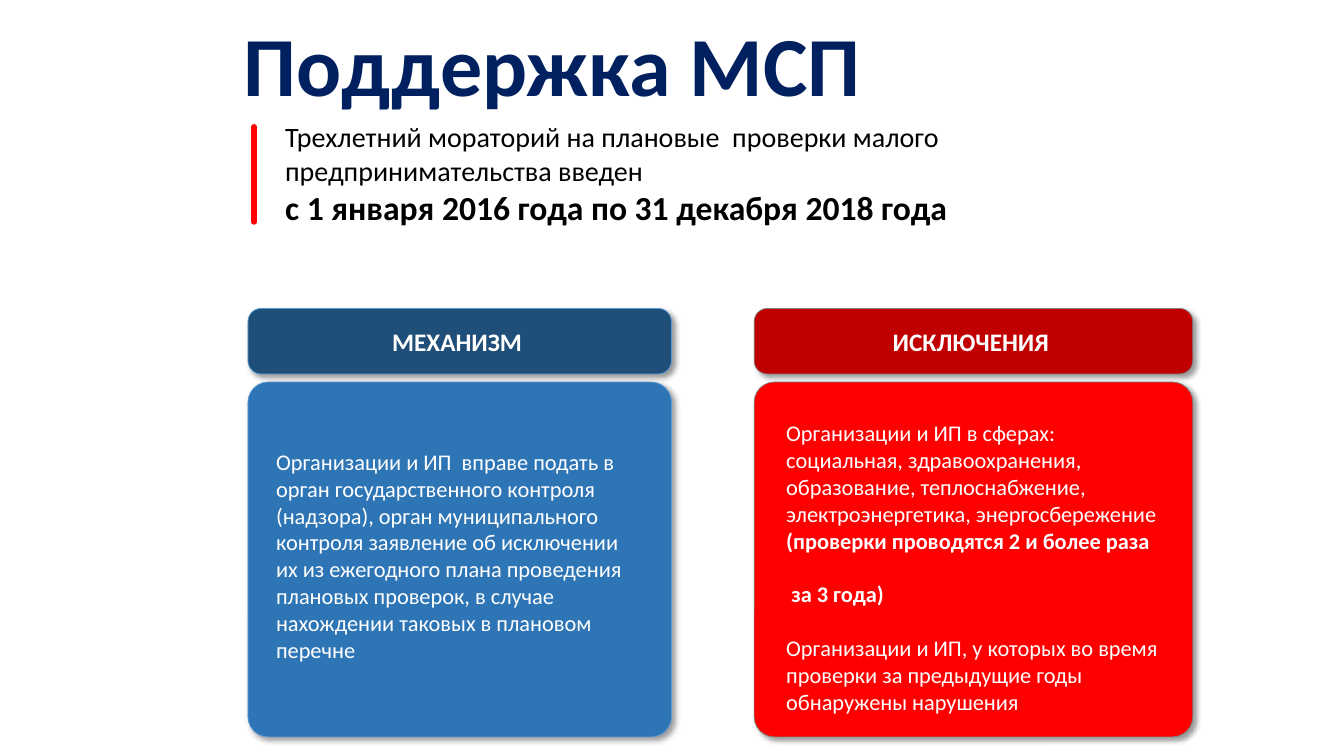
from lxml import etree
from pptx import Presentation
from pptx import util as u
from pptx.dml.color import RGBColor
from pptx.enum import shapes, text
from pptx.oxml import ns

NAVY = RGBColor(0x00, 0x20, 0x60)
BLUE = RGBColor(0x2E, 0x75, 0xB6)
DARK_BLUE = RGBColor(0x1F, 0x4E, 0x79)
LIGHT_BLUE = RGBColor(0x5B, 0x9B, 0xD5)
RED = RGBColor(0xFF, 0x00, 0x00)
DARK_RED = RGBColor(0xC0, 0x00, 0x00)
GREY = RGBColor(0x80, 0x80, 0x80)
WHITE = RGBColor(0xFF, 0xFF, 0xFF)
BLACK = RGBColor(0x00, 0x00, 0x00)

WIDTH, HEIGHT = 13.33, 7.5
HEADER_HEIGHT, PANEL_GAP, CORNER = 0.65, 0.08, 0.2
BLANK_LINE = 19.2

MECHANISM = [
    ("Организации и ИП  вправе подать в орган государственного контроля "
     "(надзора), орган муниципального контроля заявление об исключении "
     "их из ежегодного плана проведения плановых проверок, в случае "
     "нахождении таковых в плановом перечне", {}),
]
EXCEPTIONS = [
    ("Организации и ИП в сферах:", {}),
    ("социальная, здравоохранения,", {}),
    ("образование, теплоснабжение,", {}),
    ("электроэнергетика, энергосбережение", {}),
    ("(проверки проводятся 2 и более раза", {"bold": True}),
    (" за 3 года)", {"bold": True, "before": BLANK_LINE}),
    ("Организации и ИП, у которых во время проверки за предыдущие годы "
     "обнаружены нарушения", {"before": BLANK_LINE}),
]


def write(para, words, size=16, color=WHITE, bold=False, before=0,
          align=text.PP_ALIGN.LEFT, spacing=None):
    para.alignment = align
    para.space_before = u.Pt(before)
    para.line_spacing = spacing
    span = para.add_run()
    span.text = words
    span.font.name = "Calibri"
    span.font.size = u.Pt(size)
    span.font.bold = bold
    span.font.color.rgb = color


def fill_frame(frame, lines, anchor, margins=(0.1, 0.05, 0.1, 0.05)):
    """Write (words, format) lines; margins run left, top, right, bottom."""
    frame.word_wrap = True
    frame.vertical_anchor = anchor
    (frame.margin_left, frame.margin_top,
     frame.margin_right, frame.margin_bottom) = map(u.Inches, margins)
    for index, (words, style) in enumerate(lines):
        para = frame.add_paragraph() if index else frame.paragraphs[0]
        write(para, words, **style)


def add_text(page, box, lines, anchor=text.MSO_ANCHOR.TOP):
    label = page.shapes.add_textbox(*map(u.Inches, box))
    fill_frame(label.text_frame, lines, anchor)


def add_card(page, box, fill, outline):
    """Rounded card with a soft shadow to the lower right."""
    card = page.shapes.add_shape(
        shapes.MSO_SHAPE.ROUNDED_RECTANGLE, *map(u.Inches, box))
    card.adjustments[0] = CORNER / box[3] if box[3] > 1 else CORNER
    card.fill.solid()
    card.fill.fore_color.rgb = fill
    card.line.color.rgb = outline
    card.line.width = u.Pt(0.5)
    card.shadow.inherit = False
    effects = card._element.spPr.find(ns.qn("a:effectLst"))
    shadow = etree.SubElement(
        effects, ns.qn("a:outerShdw"), blurRad=str(u.Pt(4)),
        dist=str(u.Pt(3)), dir="2700000", algn="tl", rotWithShape="0")
    tint = etree.SubElement(shadow, ns.qn("a:srgbClr"), val="000000")
    etree.SubElement(tint, ns.qn("a:alpha"), val="40000")
    return card


def add_heading(page, box):
    left, top, width, height = box
    title_height = height * 0.51
    add_text(page, (left, top, width, title_height),
             [("Поддержка МСП",
               {"size": 60, "color": NAVY, "bold": True, "spacing": 0.9})],
             text.MSO_ANCHOR.BOTTOM)
    add_text(page, (left + 0.41, height * 0.49, 7.72, height * 0.51),
             [("Трехлетний мораторий на плановые  проверки малого "
               "предпринимательства введен", {"size": 20, "color": BLACK}),
              ("с 1 января 2016 года по 31 декабря 2018 года",
               {"size": 24, "color": BLACK, "bold": True})])
    bar = page.shapes.add_connector(
        shapes.MSO_CONNECTOR.STRAIGHT,
        *map(u.Inches, (left + 0.2, 1.26, left + 0.2, 2.2)))
    bar.line.color.rgb = RED
    bar.line.width = u.Pt(4.25)
    bar.line._get_or_add_ln().set("cap", "rnd")
    etree.SubElement(bar._element.spPr, ns.qn("a:effectLst"))


def add_column(page, box, header, lines, fills, outline, anchor, margins):
    """Header card over a body card, together filling the box."""
    left, top, width, height = box
    offset = HEADER_HEIGHT + PANEL_GAP
    body = add_card(page, (left, top + offset, width, height - offset),
                    fills[1], outline)
    fill_frame(body.text_frame, lines, anchor, margins)
    cap = add_card(page, (left, top, width, HEADER_HEIGHT), fills[0], outline)
    fill_frame(cap.text_frame,
               [(header, {"size": 18, "bold": True,
                          "align": text.PP_ALIGN.CENTER})],
               text.MSO_ANCHOR.MIDDLE, (0.1, 0.05, 0.15, 0.05))


def main():
    deck = Presentation()
    deck.slide_width, deck.slide_height = u.Inches(WIDTH), u.Inches(HEIGHT)
    page = deck.slides.add_slide(deck.slide_layouts[6])
    add_heading(page, (2.32, 0, WIDTH - 2.32, HEIGHT * 0.31))
    add_column(page, (2.46, 3.06, 4.2, 4.25), "МЕХАНИЗМ", MECHANISM,
               (DARK_BLUE, BLUE), LIGHT_BLUE,
               text.MSO_ANCHOR.MIDDLE, (0.22, 0.05, 0.36, 0.13))
    add_column(page, (7.48, 3.06, 4.35, 4.25), "ИСКЛЮЧЕНИЯ", EXCEPTIONS,
               (DARK_RED, RED), GREY,
               text.MSO_ANCHOR.TOP, (0.26, 0.31, 0.1, 0.05))
    deck.save("out.pptx")


if __name__ == "__main__":
    main()
